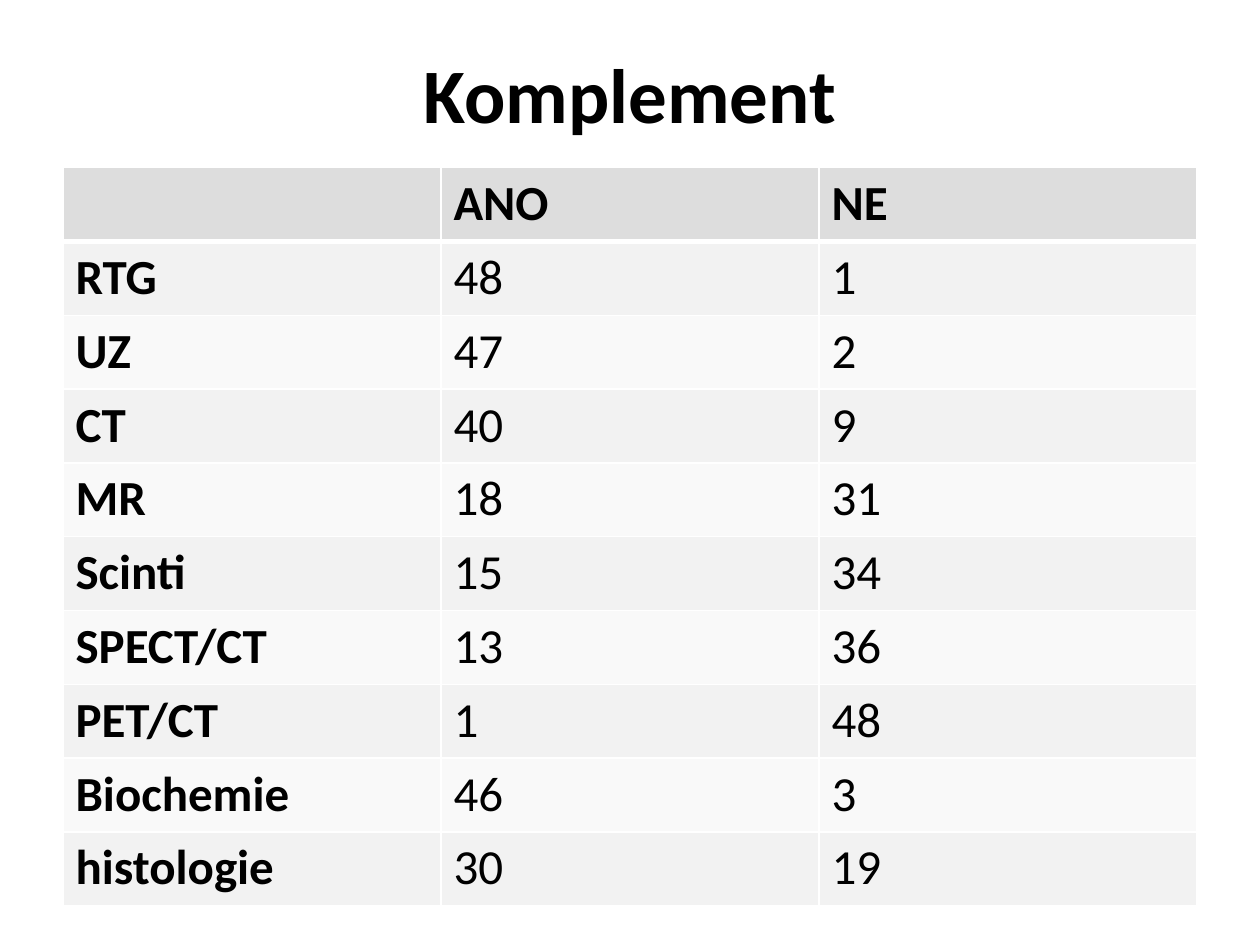
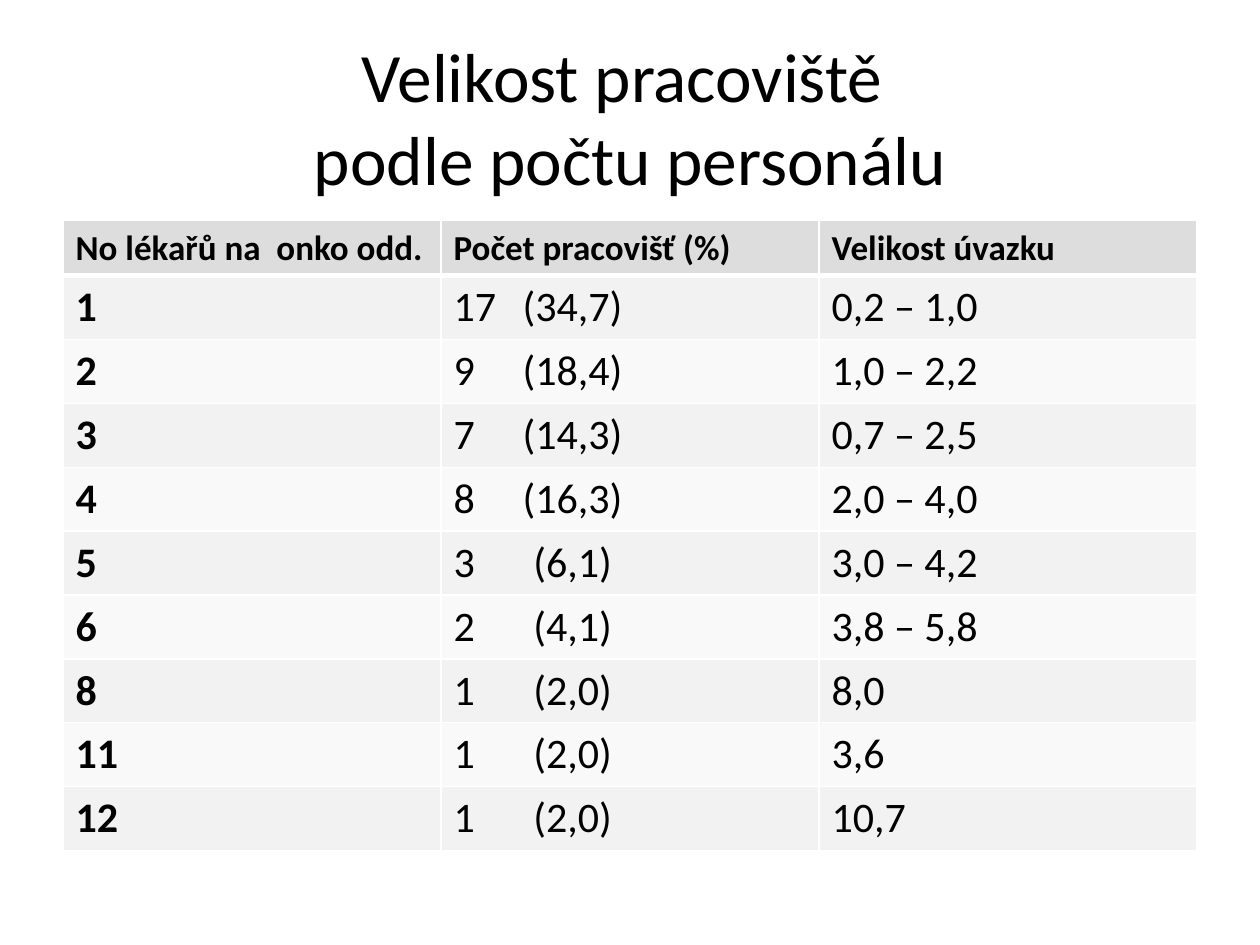
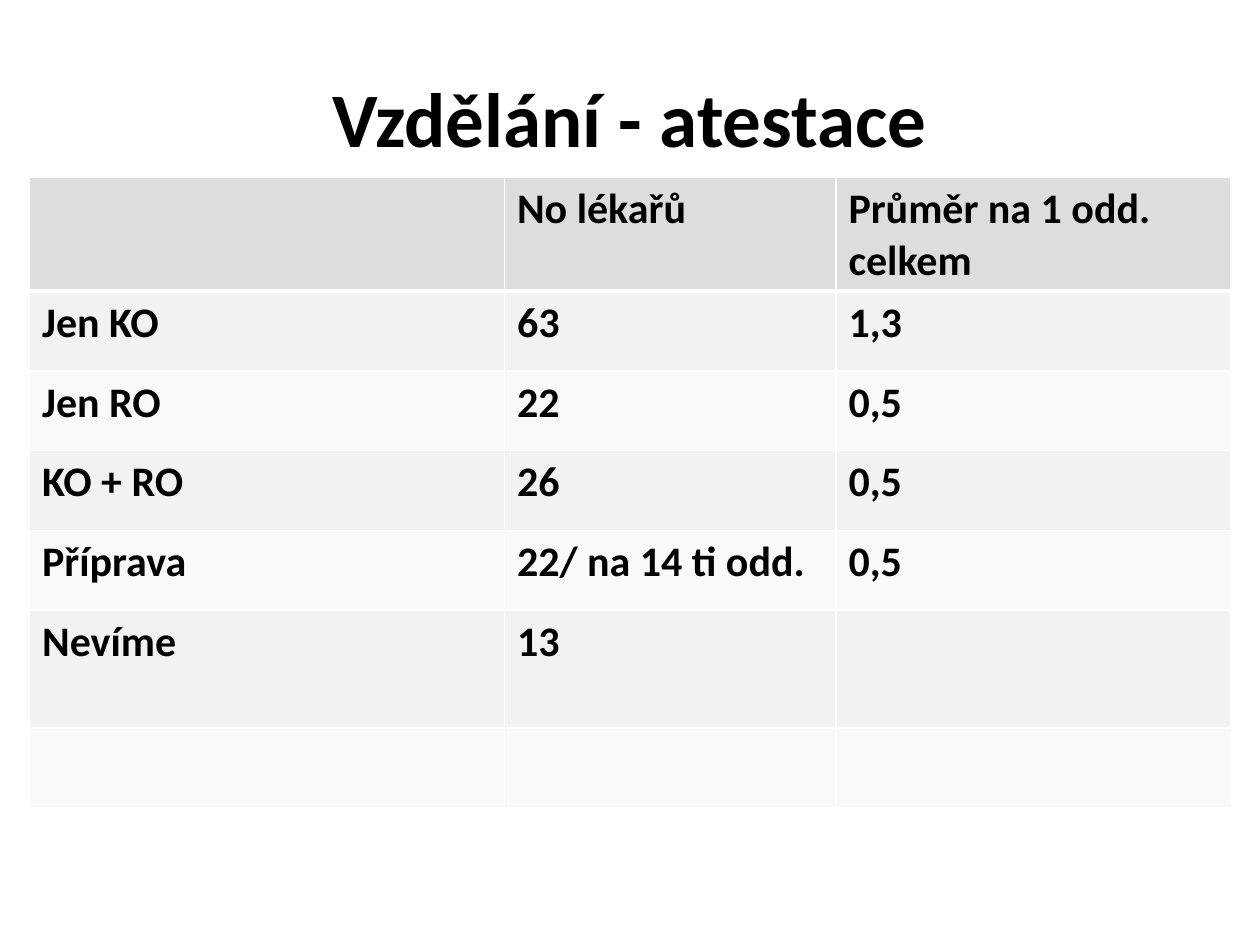
from dataclasses import dataclass

from lxml.etree import SubElement
from pptx import Presentation
from pptx.dml.color import RGBColor
from pptx.enum.text import MSO_ANCHOR as Anchor, PP_ALIGN as Align
from pptx.oxml.ns import qn
from pptx.slide import Slide
from pptx.table import _Cell as Cell
from pptx.text.text import _Paragraph as Paragraph
from pptx.util import Pt


@dataclass(frozen=True)
class Theme:
    font: str = "Calibri"
    text: str = "000000"
    border: str = "FFFFFF"
    header: str = "DDDDDD"
    bands: tuple[str, str] = ("F2F2F2", "F9F9F9")
    title: float = 44
    long_title: float = 39.6
    large: float = 28
    medium: float = 24
    small: float = 20
    thin_line: float = 1
    header_line: float = 3


THEME = Theme()


@dataclass(frozen=True)
class Title:
    text: str
    left: float
    width: float
    height: float
    top: float = 21.6
    size: float = THEME.title
    bold: bool = True


@dataclass(frozen=True)
class Grid:
    left: float
    top: float
    widths: list[float]
    heights: list[float]
    rows: list[tuple[str, ...]]
    header_size: float
    body_size: float
    bold_body: bool = False
    tab: float = 0


@dataclass(frozen=True)
class Page:
    title: Title
    grid: Grid


PAGES = [
    Page(
        Title("Komplement", 36, 648, 62.6),
        Grid(
            36, 95.8, [216] * 3, [42.2] * 10,
            [
                ("", "ANO", "NE"),
                ("RTG", "48", "1"),
                ("UZ", "47", "2"),
                ("CT", "40", "9"),
                ("MR", "18", "31"),
                ("Scinti", "15", "34"),
                ("SPECT/CT", "13", "36"),
                ("PET/CT", "1", "48"),
                ("Biochemie", "46", "3"),
                ("histologie", "30", "19"),
            ],
            THEME.large, THEME.large,
        ),
    ),
    Page(
        Title("Velikost pracoviště \vpodle počtu personálu", 22.3, 675.4, 90,
              size=THEME.long_title, bold=False),
        Grid(
            36, 126, [216] * 3, [31.6] + [36.5] * 9,
            [
                ("No lékařů na  onko odd.", "Počet pracovišť (%)", "Velikost úvazku"),
                ("1", "17\t(34,7)", "0,2 – 1,0"),
                ("2", "9\t(18,4)", "1,0 – 2,2"),
                ("3", "7\t(14,3)", "0,7 – 2,5"),
                ("4", "8\t(16,3)", "2,0 – 4,0"),
                ("5", "3\t(6,1)", "3,0 – 4,2"),
                ("6", "2\t(4,1)", "3,8 – 5,8"),
                ("8", "1\t(2,0)", "8,0"),
                ("11", "1\t(2,0)", "3,6"),
                ("12", "1\t(2,0)", "10,7"),
            ],
            THEME.small, THEME.medium, tab=68,
        ),
    ),
    Page(
        Title("Vzdělání - atestace", 36, 648, 90),
        Grid(
            16.9, 101.5, [271.4, 189.4, 225.4], [64.5] + [45.6] * 4 + [67.4, 45.6],
            [
                ("", "No lékařů", "Průměr na 1 odd. celkem"),
                ("Jen KO", "63", "1,3"),
                ("Jen RO", "22", "0,5"),
                ("KO + RO", "26", "0,5"),
                ("Příprava", "22/ na 14 ti odd.", "0,5"),
                ("Nevíme", "13", ""),
                ("", "", ""),
            ],
            THEME.medium, THEME.medium, bold_body=True,
        ),
    ),
]


def style_runs(p: Paragraph, size: float, bold: bool) -> None:
    for r in p.runs:
        r.font.name = THEME.font
        r.font.size = Pt(size)
        r.font.bold = bold
        r.font.color.rgb = RGBColor.from_string(THEME.text)


def add_title(slide: Slide, title: Title) -> None:
    sp = slide.shapes.add_textbox(
        Pt(title.left), Pt(title.top), Pt(title.width), Pt(title.height))
    tf = sp.text_frame
    tf.word_wrap = True
    tf.vertical_anchor = Anchor.MIDDLE
    tf.text = title.text
    p = tf.paragraphs[0]
    p.alignment = Align.CENTER
    style_runs(p, title.size, title.bold)


def set_borders(cell: Cell, top: float, bottom: float) -> None:
    tc_pr = cell._tc.get_or_add_tcPr()
    thin = THEME.thin_line
    for side, width in (("L", thin), ("R", thin), ("T", top), ("B", bottom)):
        ln = SubElement(tc_pr, qn(f"a:ln{side}"), w=str(Pt(width)))
        fill = SubElement(ln, qn("a:solidFill"))
        SubElement(fill, qn("a:srgbClr"), val=THEME.border)


def set_center_tab(p: Paragraph, position: float) -> None:
    tabs = SubElement(p._p.get_or_add_pPr(), qn("a:tabLst"))
    SubElement(tabs, qn("a:tab"), pos=str(Pt(position)), algn="ctr")


def fill_cell(cell: Cell, grid: Grid, row: int, col: int) -> None:
    is_header = row == 0
    set_borders(
        cell,
        THEME.header_line if row == 1 else THEME.thin_line,
        THEME.header_line if is_header else THEME.thin_line,
    )
    color = THEME.header if is_header else THEME.bands[(row - 1) % 2]
    cell.fill.solid()
    cell.fill.fore_color.rgb = RGBColor.from_string(color)
    text = grid.rows[row][col]
    if not text:
        return
    cell.text_frame.text = text
    p = cell.text_frame.paragraphs[0]
    if "\t" in text:
        set_center_tab(p, grid.tab)
    size = grid.header_size if is_header else grid.body_size
    style_runs(p, size, is_header or col == 0 or grid.bold_body)


def add_grid(slide: Slide, grid: Grid) -> None:
    table = slide.shapes.add_table(
        len(grid.heights), len(grid.widths), Pt(grid.left), Pt(grid.top),
        Pt(sum(grid.widths)), Pt(sum(grid.heights))).table
    table.first_row = False
    table.horz_banding = False
    for column, width in zip(table.columns, grid.widths):
        column.width = Pt(width)
    for i, height in enumerate(grid.heights):
        table.rows[i].height = Pt(height)
        for j in range(len(grid.widths)):
            fill_cell(table.cell(i, j), grid, i, j)


def main() -> None:
    prs = Presentation()
    prs.slide_width, prs.slide_height = Pt(720), Pt(540)
    for page in PAGES:
        slide = prs.slides.add_slide(prs.slide_layouts[6])
        add_title(slide, page.title)
        add_grid(slide, page.grid)
    prs.save("out.pptx")


if __name__ == "__main__":
    main()
